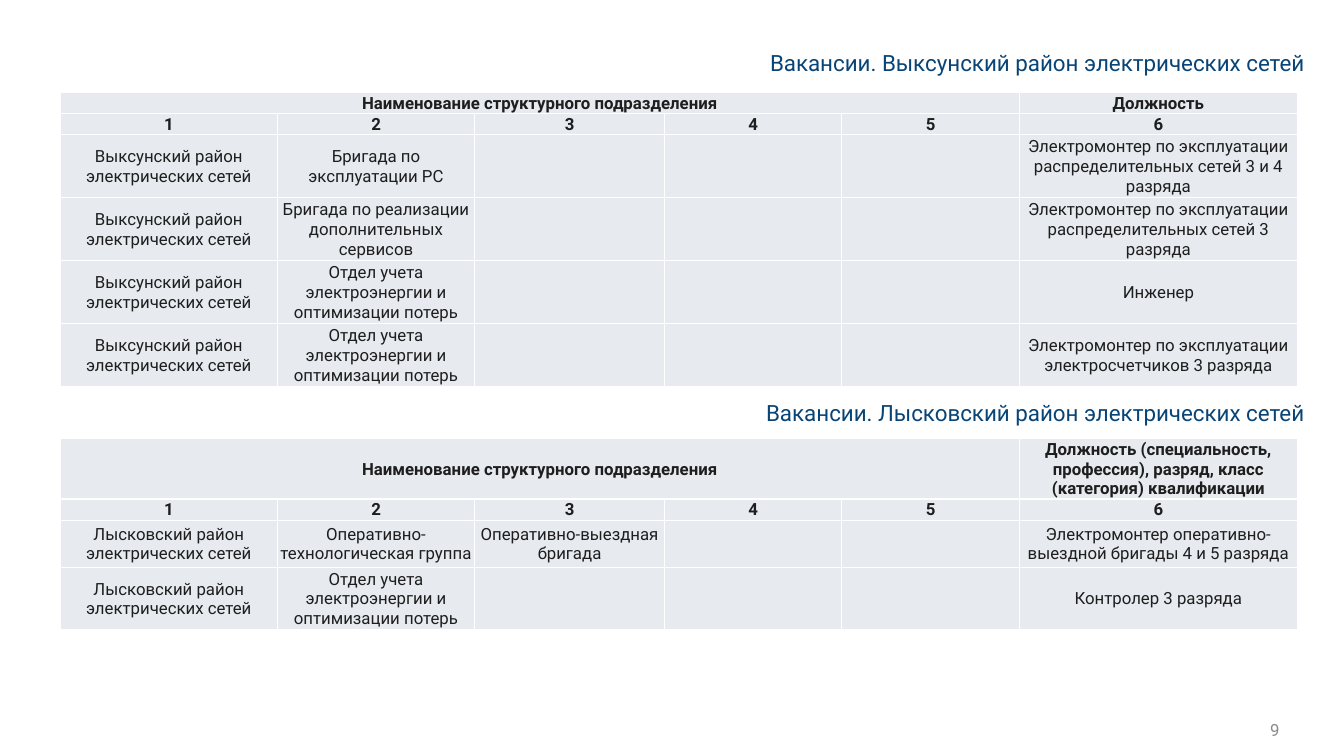
from dataclasses import dataclass
from lxml import etree
from pptx import Presentation
from pptx.dml.color import RGBColor
from pptx.enum.text import MSO_ANCHOR, MSO_AUTO_SIZE, PP_ALIGN
from pptx.oxml.ns import qn
from pptx.util import Inches, Pt

TOP, MIDDLE = MSO_ANCHOR.TOP, MSO_ANCHOR.MIDDLE
RIGHT, CENTER = PP_ALIGN.RIGHT, PP_ALIGN.CENTER
NO_FIT = MSO_AUTO_SIZE.NONE


@dataclass(frozen=True)
class Theme:
    font: str = "Roboto"
    blue: str = "094476"
    ink: str = "1E1E1E"
    gray: str = "8A8A8A"
    fill: str = "E7EAEF"
    line: str = "FFFFFF"
    head: int = 16
    body: int = 12


THEME = Theme()
COLS = [2.15, 1.96, 1.88, 1.76, 1.76, 2.76]
UNIT = "Наименование структурного подразделения"
NUMS = ["1", "2", "3", "4", "5", "6"]
VYKSA = "Выксунский район электрических сетей"
LYSK = "Лысковский район электрических сетей"
METERS = "Отдел учета электроэнергии и оптимизации потерь"
FITTER = "Электромонтер по эксплуатации "

VYKSA_ROWS = [
    [UNIT, "", "", "", "", "Должность"],
    NUMS,
    [VYKSA, "Бригада по эксплуатации РС", "", "", "",
     FITTER + "распределительных сетей 3 и 4 разряда"],
    [VYKSA, "Бригада по реализации дополнительных сервисов", "", "", "",
     FITTER + "распределительных сетей 3 разряда"],
    [VYKSA, METERS, "", "", "", "Инженер"],
    [VYKSA, METERS, "", "", "", FITTER + "электросчетчиков 3 разряда"],
]
LYSK_ROWS = [
    [UNIT, "", "", "", "",
     "Должность (специальность, профессия), разряд, класс (категория) квалификации"],
    NUMS,
    [LYSK, "Оперативно-технологическая группа", "Оперативно-выездная бригада",
     "", "", "Электромонтер оперативно-выездной бригады 4 и 5 разряда"],
    [LYSK, METERS, "", "", "", "Контролер 3 разряда"],
]


def write(frame, text, size=THEME.body, color=THEME.ink, bold=False,
          align=CENTER, space=1.0):
    para = frame.paragraphs[0]
    para.alignment = align
    para.line_spacing = space
    para.font.size = Pt(size)
    if text:
        run = para.add_run()
        run.text = text
        font = run.font
        font.name, font.size, font.bold = THEME.font, Pt(size), bold
        font.color.rgb = RGBColor.from_string(color)


def label(shape, text, box, anchor=TOP, **style):
    shape.left, shape.top, shape.width, shape.height = map(Inches, box)
    frame = shape.text_frame
    frame.word_wrap = True
    frame.auto_size = NO_FIT
    frame.vertical_anchor = anchor
    frame.margin_left = frame.margin_right = 0
    frame.margin_top = frame.margin_bottom = 0
    write(frame, text, align=RIGHT, **style)


def heading(shape, text, top):
    label(shape, text, (6.19, top, 6.75, 0.24), size=THEME.head,
          color=THEME.blue, space=0.9)


def border(cell):
    props = cell._tc.get_or_add_tcPr()
    for side in ("a:lnL", "a:lnR", "a:lnT", "a:lnB"):
        line = etree.SubElement(props, qn(side), w=str(Pt(1)))
        solid = etree.SubElement(line, qn("a:solidFill"))
        etree.SubElement(solid, qn("a:srgbClr"), val=THEME.line)


def style_cell(cell, text, bold):
    border(cell)
    cell.fill.solid()
    cell.fill.fore_color.rgb = RGBColor.from_string(THEME.fill)
    cell.margin_left = cell.margin_right = cell.margin_top = Inches(0.01)
    cell.margin_bottom = 0
    cell.vertical_anchor = MIDDLE
    write(cell.text_frame, text, bold=bold)


def grid(slide, rows, top, heights):
    frame = slide.shapes.add_table(
        len(rows), len(COLS), Inches(0.6), Inches(top),
        Inches(sum(COLS)), Inches(sum(heights)))
    table = frame.table
    table.first_row = table.horz_banding = False
    for col, width in zip(table.columns, COLS):
        col.width = Inches(width)
    for row, high in zip(table.rows, heights):
        row.height = Inches(high)
    for r, row in enumerate(rows):
        for c, text in enumerate(row):
            style_cell(table.cell(r, c), text, bold=r < 2)
    # The unit header covers every column but the last
    table.cell(0, 0).merge(table.cell(0, 4))


def main():
    deck = Presentation()
    deck.slide_width, deck.slide_height = Inches(13.33), Inches(7.5)
    slide = deck.slides.add_slide(deck.slide_layouts[5])
    shapes = slide.shapes

    # Vyksa district
    heading(shapes.title, "Вакансии. " + VYKSA, 0.52)
    grid(slide, VYKSA_ROWS, 0.92, [0.2, 0.21] + [0.625] * 4)

    # Lyskovo district
    heading(shapes.add_textbox(0, 0, 0, 0), "Вакансии. " + LYSK, 3.99)
    grid(slide, LYSK_ROWS, 4.35, [0.6, 0.21, 0.47, 0.62])

    # Page number
    label(shapes.add_textbox(0, 0, 0, 0), "9", (12.12, 7.15, 0.57, 0.18),
          anchor=MIDDLE, color=THEME.gray)
    deck.save("out.pptx")


if __name__ == "__main__":
    main()
